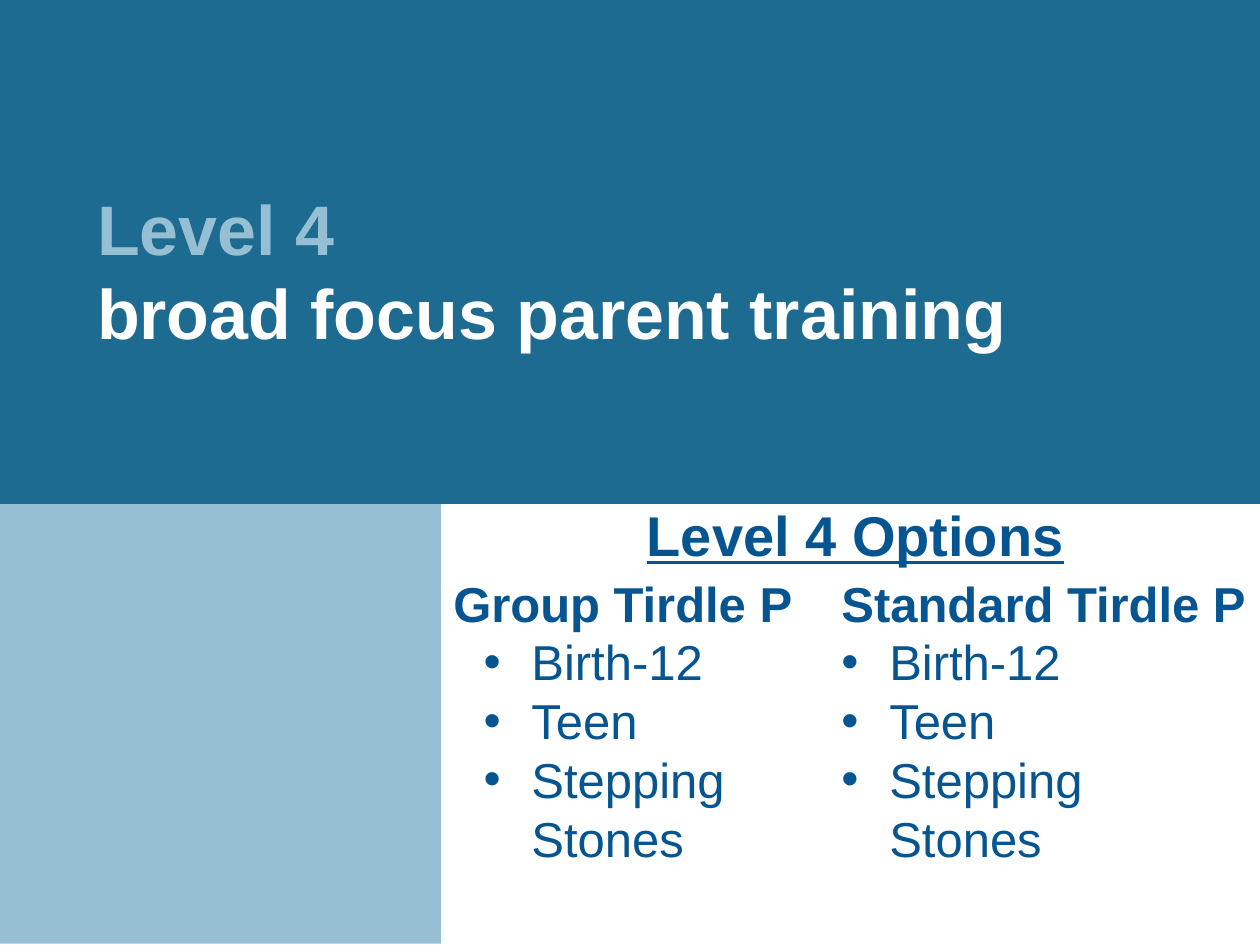
from pptx import Presentation
from pptx.dml.color import RGBColor
from pptx.enum.shapes import MSO_SHAPE
from pptx.enum.text import PP_ALIGN
from pptx.oxml.ns import qn
from pptx.util import Inches, Pt
from lxml import etree

RECTANGLE = MSO_SHAPE.RECTANGLE
LEFT, CENTER = PP_ALIGN.LEFT, PP_ALIGN.CENTER
COLORS = {"banner": "1E6B92", "pale": "96BFD4", "white": "FFFFFF", "text": "065590"}


def format_font(font, size, color, bold=True):
    font.name = "Arial"
    font.size = Pt(size)
    font.bold = bold
    font.color.rgb = RGBColor.from_string(COLORS[color])


def add_bullet(paragraph, margin, hanging):
    properties = paragraph._p.get_or_add_pPr()
    properties.set("marL", str(Inches(margin)))
    properties.set("indent", str(-Inches(hanging)))
    etree.SubElement(properties, qn("a:buFont"), typeface="Arial")
    etree.SubElement(properties, qn("a:buChar"), char="•")


prs = Presentation()
prs.slide_width, prs.slide_height = Inches(10), Inches(7.5)
slide = prs.slides.add_slide(prs.slide_layouts.get_by_name("Title Only"))

# Colour panels, moved behind the title
panels = [("pale", 0, 3.98, 3.5, 3.51), ("banner", 0, 0, 10, 4)]
for position, (color, *box) in enumerate(panels):
    panel = slide.shapes.add_shape(RECTANGLE, *map(Inches, box))
    panel.shadow.inherit = False
    panel.fill.solid()
    panel.fill.fore_color.rgb = RGBColor.from_string(COLORS[color])
    panel.line.fill.background()
    slide.shapes._spTree.insert(2 + position, panel._element)

# Title
title = slide.shapes.title
title.left, title.top = Inches(0.67), Inches(1.42)
title.width, title.height = Inches(8.83), Inches(2.28)
heading = title.text_frame
heading.text = "Level 4\vbroad focus parent training"
heading.word_wrap = True
heading.vertical_anchor = None
heading._txBody.bodyPr.set("anchor", "t")
heading.paragraphs[0].alignment = LEFT
for run, color in zip(heading.paragraphs[0].runs, ("pale", "white")):
    format_font(run.font, 40, color)

# Option columns
options = ["Birth-12", "Teen", "Stepping Stones"]
columns = [
    ("Group Tirdle P", 3.5, 3.33, 2.46, 0.62),
    ("Standard Tirdle P", 6.58, 3.42, 2.54, 0.38),
]
for program, left, width, height, margin in columns:
    column = slide.shapes.add_textbox(
        Inches(left), Inches(4.5), Inches(width), Inches(height)
    ).text_frame
    column.word_wrap = True
    column.text = "\n".join([program] + options)
    format_font(column.paragraphs[0].runs[0].font, 28, "text")
    for option in column.paragraphs[1:]:
        add_bullet(option, margin, 0.38)
        format_font(option.runs[0].font, 28, "text", bold=False)

# Options heading
options_heading = slide.shapes.add_textbox(
    Inches(3.58), Inches(3.92), Inches(6.42), Inches(0.64)
).text_frame
options_heading.word_wrap = True
options_heading.text = "Level 4 Options"
options_heading.paragraphs[0].alignment = CENTER
options_font = options_heading.paragraphs[0].runs[0].font
format_font(options_font, 32, "text")
options_font.underline = True

prs.save("out.pptx")
